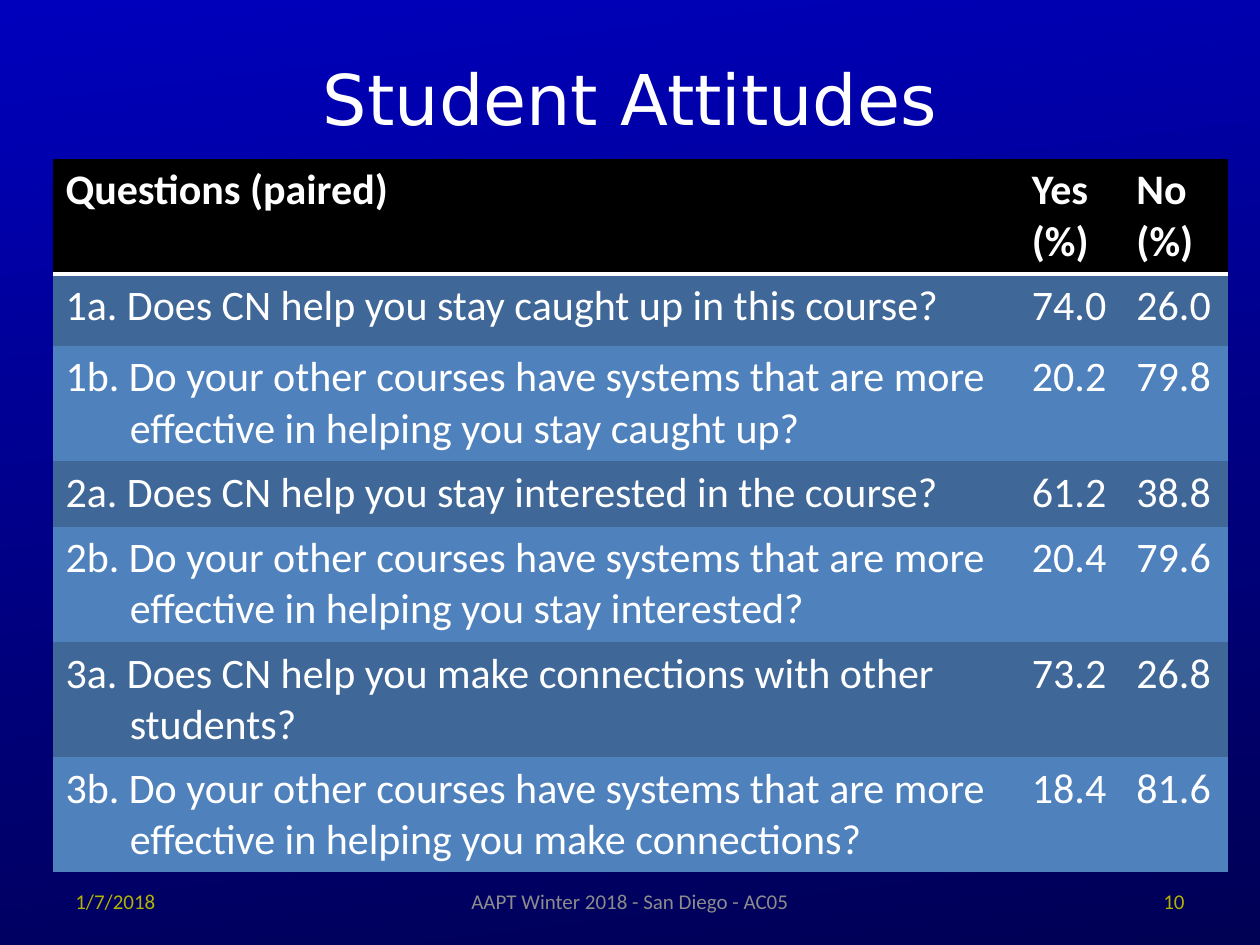
import lxml.etree
import pptx
import pptx.dml.color
import pptx.enum.text
import pptx.oxml.ns
import pptx.util
from pptx.util import Inches

ALIGN = pptx.enum.text.PP_ALIGN
ANCHOR = pptx.enum.text.MSO_ANCHOR
NO_STYLE_NO_GRID = "{2D5ABB26-0587-4C30-8999-92F81FD0307C}"
WHITE = "FFFFFF"
FOOTER_YELLOW = "B2B203"
HEADER_FILL = "000000"
ROW_FILLS = ["3F6797", "4F81BD"]
COLUMN_WIDTHS = [7.67, 0.83, 0.83]
TWO_LINES = 0.915
HANGING = 0.51

HEADINGS = ["Questions (paired)", "Yes (%)", "No (%)"]
# Row height, hanging indent, cell texts
QUESTIONS = [
    (0.57, 0, ["1a. Does CN help you stay caught up in this course?", "74.0", "26.0"]),
    (TWO_LINES, HANGING, ["1b. Do your other courses have systems that are more "
                          "effective in helping you stay caught up?", "20.2", "79.8"]),
    (0.52, 0, ["2a. Does CN help you stay interested in the course?", "61.2", "38.8"]),
    (TWO_LINES, HANGING, ["2b. Do your other courses have systems that are more "
                          "effective in helping you stay interested?", "20.4", "79.6"]),
    (TWO_LINES, HANGING, ["3a. Does CN help you make connections with other students?",
                          "73.2", "26.8"]),
    (TWO_LINES, HANGING, ["3b. Do your other courses have systems that are more "
                          "effective in helping you make connections?", "18.4", "81.6"]),
]


def rgb(color):
    return pptx.dml.color.RGBColor.from_string(color)


def format_runs(paragraph, size, color, font="Calibri", bold=False):
    for run in paragraph.runs:
        run.font.name = font
        run.font.size = pptx.util.Pt(size)
        run.font.bold = bold
        run.font.color.rgb = rgb(color)


def add_text(slide, left, top, width, height, text, size, color, alignment, font="Calibri"):
    box = slide.shapes.add_textbox(Inches(left), Inches(top), Inches(width), Inches(height))
    box.text_frame.word_wrap = True
    box.text_frame.vertical_anchor = ANCHOR.MIDDLE
    box.text_frame.text = text
    paragraph = box.text_frame.paragraphs[0]
    paragraph.alignment = alignment
    format_runs(paragraph, size, color, font)


def set_background(slide):
    fill = slide.background.fill
    fill.gradient()
    fill.gradient_angle = 277
    for stop, color, position in zip(fill.gradient_stops, ["0000BC", "000054"], [0, 1]):
        stop.color.rgb = rgb(color)
        stop.position = position


def add_bottom_border(cell, color, points):
    qn = pptx.oxml.ns.qn
    line = lxml.etree.Element(qn("a:lnB"), w=str(pptx.util.Pt(points)))
    solid = lxml.etree.SubElement(line, qn("a:solidFill"))
    lxml.etree.SubElement(solid, qn("a:srgbClr"), val=color)
    cell._tc.get_or_add_tcPr().insert(0, line)


def fill_cell(cell, text, fill, bold=False, hanging=0):
    cell.fill.solid()
    cell.fill.fore_color.rgb = rgb(fill)
    cell.text_frame.text = text
    paragraph = cell.text_frame.paragraphs[0]
    format_runs(paragraph, 24, WHITE, bold=bold)
    if hanging:
        properties = paragraph._p.get_or_add_pPr()
        properties.set("marL", str(Inches(hanging)))
        properties.set("indent", str(-Inches(hanging)))


def add_question_table(slide, left, top, width, height):
    frame = slide.shapes.add_table(len(QUESTIONS) + 1, len(HEADINGS), Inches(left),
                                   Inches(top), Inches(width), Inches(height))
    table = frame.table
    table.horz_banding = False
    table._tbl.tblPr.find(pptx.oxml.ns.qn("a:tableStyleId")).text = NO_STYLE_NO_GRID
    for column, column_width in zip(table.columns, COLUMN_WIDTHS):
        column.width = Inches(column_width)

    table.rows[0].height = Inches(TWO_LINES)
    for cell, heading in zip(table.rows[0].cells, HEADINGS):
        fill_cell(cell, heading, HEADER_FILL, bold=True)
        add_bottom_border(cell, WHITE, 2)

    for index, (row_height, hanging, texts) in enumerate(QUESTIONS):
        row = table.rows[index + 1]
        row.height = Inches(row_height)
        for column, (cell, text) in enumerate(zip(row.cells, texts)):
            fill_cell(cell, text, ROW_FILLS[index % 2], hanging=0 if column else hanging)


def add_footer(slide, left, top, width, height):
    side, middle = 2.33, 3.17
    add_text(slide, left, top, side, height, "1/7/2018", 12, FOOTER_YELLOW, ALIGN.LEFT)
    add_text(slide, left + (width - middle) / 2, top, middle, height,
             "AAPT Winter 2018 - San Diego - AC05", 12, "8C8C8C", ALIGN.CENTER)
    add_text(slide, left + width - side, top, side, height, "10", 12,
             FOOTER_YELLOW, ALIGN.RIGHT)


def main():
    presentation = pptx.Presentation()
    presentation.slide_width = Inches(10)
    presentation.slide_height = Inches(7.5)
    slide = presentation.slides.add_slide(presentation.slide_layouts[6])
    set_background(slide)
    add_text(slide, 0.5, 0.3, 9, 0.95, "Student Attitudes", 40, WHITE,
             ALIGN.CENTER, "DejaVu Sans")
    add_question_table(slide, 0.42, 1.26, 9.33, 5.66)
    add_footer(slide, 0.5, 6.95, 9, 0.4)
    presentation.save("out.pptx")


if __name__ == "__main__":
    main()
